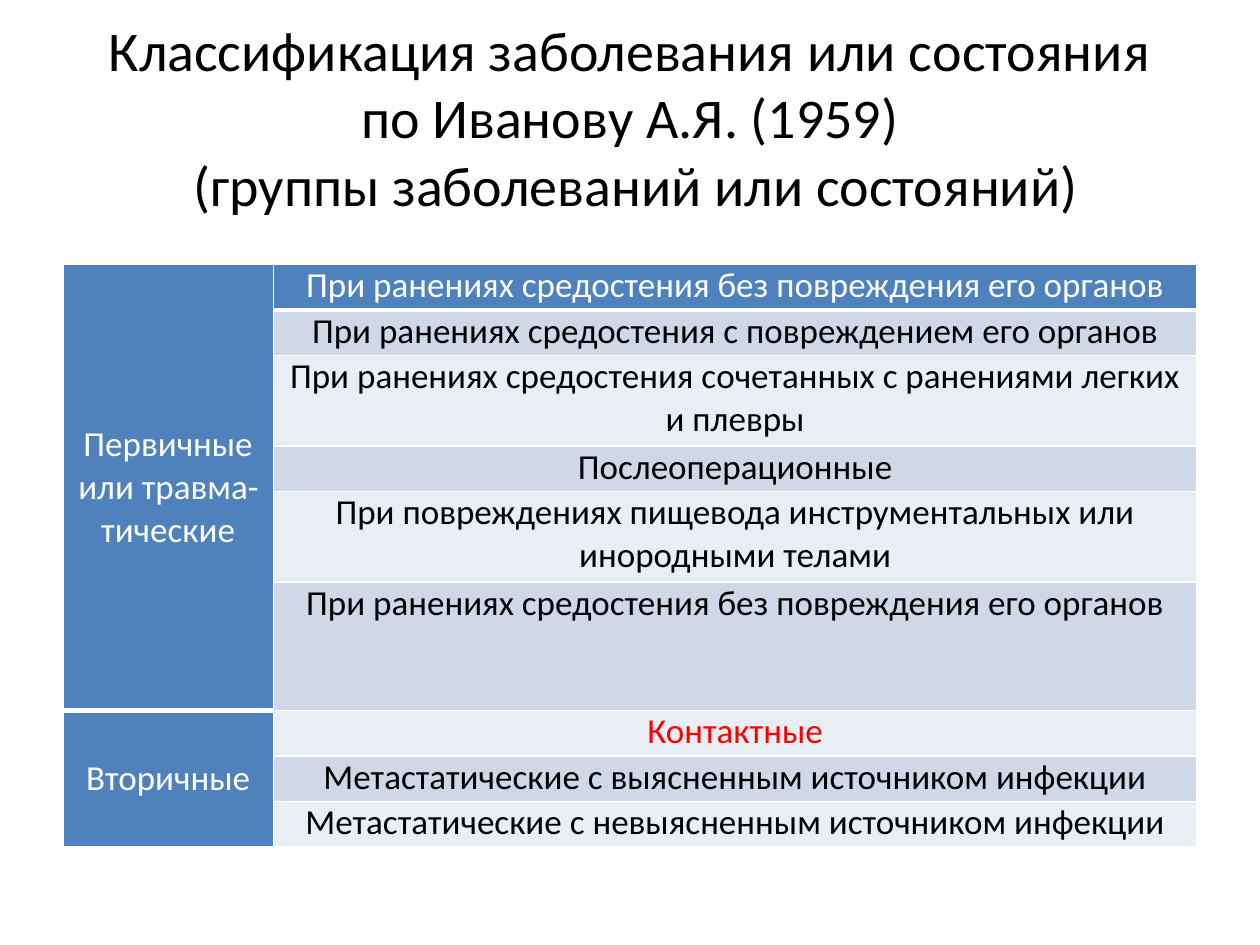
from typing import NamedTuple

from lxml.etree import SubElement
from pptx import Presentation
from pptx.dml.color import RGBColor
from pptx.enum.text import MSO_ANCHOR, MSO_AUTO_SIZE, PP_ALIGN
from pptx.oxml.ns import qn
from pptx.util import Inches, Pt

WHITE = RGBColor(0xFF, 0xFF, 0xFF)
BLACK = RGBColor(0x00, 0x00, 0x00)
RED = RGBColor(0xFF, 0x00, 0x00)
BLUE = RGBColor(0x4F, 0x81, 0xBD)
BANDS = (RGBColor(0xE9, 0xED, 0xF4), RGBColor(0xD0, 0xD8, 0xE8))

FONT = "Calibri"
LINE_HEIGHT = 0.36
COLUMN_WIDTHS = (1.67, 7.33)
THIN, THICK = Pt(1), Pt(3)


class Form(NamedTuple):
    text: str
    lines: int = 1
    color: RGBColor = BLACK


class Group(NamedTuple):
    name: str
    forms: tuple[Form, ...]


GROUPS = (
    Group("Первичные или травма-тические", (
        Form("При ранениях средостения без повреждения его органов", color=WHITE),
        Form("При ранениях средостения с повреждением его органов"),
        Form("При ранениях средостения сочетанных с ранениями легких и плевры", 2),
        Form("Послеоперационные"),
        Form("При повреждениях пищевода инструментальных или инородными телами", 2),
        Form("При ранениях средостения без повреждения его органов"),
    )),
    Group("Вторичные", (
        Form("Контактные", color=RED),
        Form("Метастатические с выясненным источником инфекции"),
        Form("Метастатические с невыясненным источником инфекции"),
    )),
)


def set_borders(cell, top: int = THIN, bottom: int = THIN) -> None:
    """Give the cell white borders, placed before its fill as the schema asks."""
    properties = cell._tc.get_or_add_tcPr()
    widths = {"a:lnL": THIN, "a:lnR": THIN, "a:lnT": top, "a:lnB": bottom}
    for position, (tag, width) in enumerate(widths.items()):
        line = SubElement(properties, qn(tag), w=str(width))
        fill = SubElement(line, qn("a:solidFill"))
        SubElement(fill, qn("a:srgbClr"), val=str(WHITE))
        properties.insert(position, line)


def style_cell(cell, fill: RGBColor) -> None:
    cell.fill.solid()
    cell.fill.fore_color.rgb = fill
    cell.margin_left = cell.margin_right = Inches(0.07)
    cell.margin_top = cell.margin_bottom = 0


def write_cell(cell, text: str, color: RGBColor) -> None:
    cell.text = text
    paragraph = cell.text_frame.paragraphs[0]
    paragraph.alignment = PP_ALIGN.CENTER
    paragraph.space_after = Pt(5)
    font = paragraph.font
    font.name, font.size, font.bold = FONT, Pt(20), False
    font.color.rgb = color


def add_title(slide) -> None:
    title = slide.shapes.title
    title.left, title.top = Inches(0.5), Inches(0.3)
    title.width, title.height = Inches(9), Inches(1.25)
    frame = title.text_frame
    frame.text = ("Классификация заболевания или состояния по Иванову А.Я. (1959)"
                  "\v (группы заболеваний или состояний)")
    frame.auto_size = MSO_AUTO_SIZE.NONE
    frame.vertical_anchor = MSO_ANCHOR.MIDDLE
    paragraph = frame.paragraphs[0]
    paragraph.alignment = PP_ALIGN.CENTER
    paragraph.font.name, paragraph.font.size = FONT, Pt(32)
    paragraph.font.color.rgb = BLACK


def add_classification(slide, groups: tuple[Group, ...]) -> None:
    forms = [form for group in groups for form in group.forms]
    height = LINE_HEIGHT * sum(form.lines for form in forms)
    table = slide.shapes.add_table(len(forms), 2, Inches(0.5), Inches(2.1),
                                   Inches(9), Inches(height)).table
    for column, width in zip(table.columns, COLUMN_WIDTHS):
        column.width = Inches(width)

    for row, form in enumerate(forms):
        table.rows[row].height = Inches(LINE_HEIGHT * form.lines)
        cell = table.cell(row, 1)
        style_cell(cell, BANDS[row % 2] if row else BLUE)
        write_cell(cell, form.text, form.color)
        set_borders(cell, top=THICK if row == 1 else THIN,
                    bottom=THICK if row == 0 else THIN)

    first = 0
    for group in groups:
        last = first + len(group.forms) - 1
        for row in range(first, last + 1):
            cell = table.cell(row, 0)
            style_cell(cell, BLUE)
            set_borders(cell, top=THICK if row == first > 0 else THIN,
                        bottom=THICK if first == 0 else THIN)
        name = table.cell(first, 0)
        name.merge(table.cell(last, 0))
        name.vertical_anchor = MSO_ANCHOR.MIDDLE
        write_cell(name, group.name, WHITE)
        first = last + 1


def main() -> None:
    presentation = Presentation()
    presentation.slide_width, presentation.slide_height = Inches(10), Inches(7.5)
    slide = presentation.slides.add_slide(presentation.slide_layouts[5])
    add_title(slide)
    add_classification(slide, GROUPS)
    presentation.save("out.pptx")


if __name__ == "__main__":
    main()
